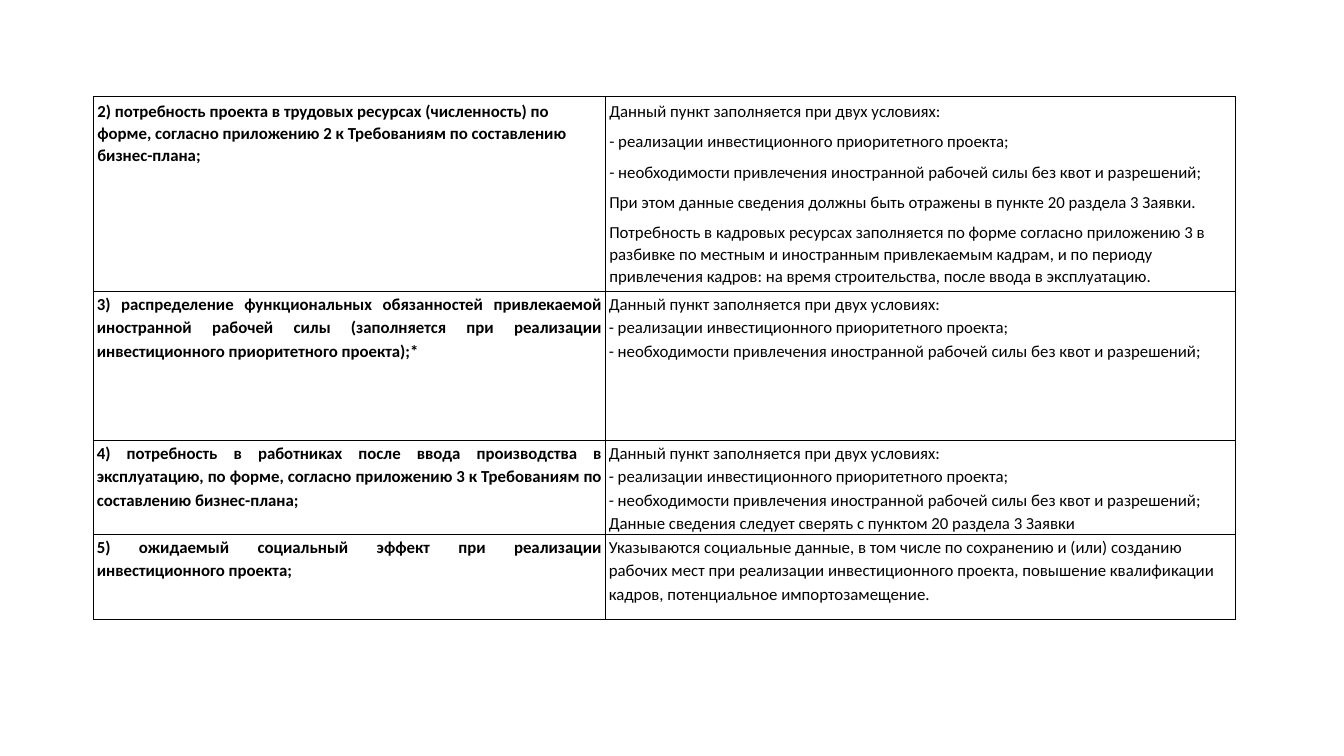
import dataclasses

import lxml.etree
import pptx
import pptx.dml.color
import pptx.enum.text
import pptx.oxml.ns
import pptx.table
import pptx.util

Pt = pptx.util.Pt
Alignment = pptx.enum.text.PP_ALIGN

COLORS = {"text": "000000", "border": "000000"}
COLUMN_WIDTHS = (731.5, 900.7)
BORDER_WIDTH = 1

# Sentences shared by several rows
CONDITIONS = (
    "Данный пункт заполняется при двух условиях:",
    "- реализации инвестиционного приоритетного проекта;",
    "- необходимости привлечения иностранной рабочей силы без квот и разрешений;",
)


@dataclasses.dataclass(frozen=True)
class RowStyle:
    line_spacing: float
    space_after: float
    side_margin: float
    vertical_margin: float
    heading_alignment: Alignment


@dataclasses.dataclass(frozen=True)
class Requirement:
    height: float
    heading: str
    explanation: tuple[str, ...]
    style: RowStyle


SPACED = RowStyle(1.07, 12, 5.76, 5.76, Alignment.LEFT)
COMPACT = RowStyle(1.15, 0, 5.04, 0, Alignment.JUSTIFY)

REQUIREMENTS = (
    Requirement(
        276,
        "2) потребность проекта в трудовых ресурсах (численность) по форме, "
        "согласно приложению 2 к Требованиям по составлению бизнес-плана;",
        CONDITIONS + (
            "При этом данные сведения должны быть отражены в пункте 20 раздела 3 Заявки.",
            "Потребность в кадровых ресурсах заполняется по форме согласно приложению 3 "
            "в разбивке по местным и иностранным привлекаемым кадрам, и по периоду "
            "привлечения кадров: на время строительства, после ввода в эксплуатацию.",
        ),
        SPACED,
    ),
    Requirement(
        212.5,
        "3) распределение функциональных обязанностей привлекаемой иностранной рабочей "
        "силы (заполняется при реализации инвестиционного приоритетного проекта);*",
        CONDITIONS,
        COMPACT,
    ),
    Requirement(
        133,
        "4) потребность в работниках после ввода производства в эксплуатацию, по форме, "
        "согласно приложению 3 к Требованиям по составлению бизнес-плана;",
        CONDITIONS + ("Данные сведения следует сверять с пунктом 20 раздела 3 Заявки",),
        COMPACT,
    ),
    Requirement(
        121,
        "5) ожидаемый социальный эффект при реализации инвестиционного проекта;",
        (
            "Указываются социальные данные, в том числе по сохранению и (или) созданию "
            "рабочих мест при реализации инвестиционного проекта, повышение квалификации "
            "кадров, потенциальное импортозамещение.",
        ),
        COMPACT,
    ),
)


def add_borders(cell: pptx.table._Cell) -> None:
    """Draw a solid line on all four sides of a cell."""
    qualified = pptx.oxml.ns.qn
    properties = cell._tc.get_or_add_tcPr()
    for index, side in enumerate(("lnL", "lnR", "lnT", "lnB")):
        line = lxml.etree.Element(qualified(f"a:{side}"), w=str(Pt(BORDER_WIDTH)))
        fill = lxml.etree.SubElement(line, qualified("a:solidFill"))
        lxml.etree.SubElement(fill, qualified("a:srgbClr"), val=COLORS["border"])
        properties.insert(index, line)


def fill_cell(cell: pptx.table._Cell, texts: tuple[str, ...], style: RowStyle,
              alignment: Alignment, bold: bool) -> None:
    """Write one paragraph per text and style the cell."""
    cell.fill.background()
    add_borders(cell)
    cell.margin_left = cell.margin_right = Pt(style.side_margin)
    cell.margin_top = cell.margin_bottom = Pt(style.vertical_margin)
    for index, text in enumerate(texts):
        frame = cell.text_frame
        paragraph = frame.add_paragraph() if index else frame.paragraphs[0]
        paragraph.alignment = alignment
        paragraph.line_spacing = style.line_spacing
        paragraph.space_after = Pt(style.space_after)
        run = paragraph.add_run()
        run.text = text
        run.font.name = "Calibri"
        run.font.size = Pt(24)
        run.font.bold = bold
        run.font.color.rgb = pptx.dml.color.RGBColor.from_string(COLORS["text"])


def main() -> None:
    presentation = pptx.Presentation()
    presentation.slide_width = Pt(1920)
    presentation.slide_height = Pt(1080)
    slide = presentation.slides.add_slide(presentation.slide_layouts[6])

    # Table frame
    shape = slide.shapes.add_table(
        len(REQUIREMENTS), len(COLUMN_WIDTHS), Pt(133.2), Pt(137.5),
        Pt(sum(COLUMN_WIDTHS)), Pt(sum(item.height for item in REQUIREMENTS)))
    table = shape.table
    table.first_row = False
    table.horz_banding = False
    for column, width in zip(table.columns, COLUMN_WIDTHS):
        column.width = Pt(width)

    # Requirement on the left, explanation on the right
    for index, item in enumerate(REQUIREMENTS):
        table.rows[index].height = Pt(item.height)
        fill_cell(table.cell(index, 0), (item.heading,), item.style,
                  item.style.heading_alignment, bold=True)
        fill_cell(table.cell(index, 1), item.explanation, item.style,
                  Alignment.LEFT, bold=False)

    presentation.save("out.pptx")


if __name__ == "__main__":
    main()
